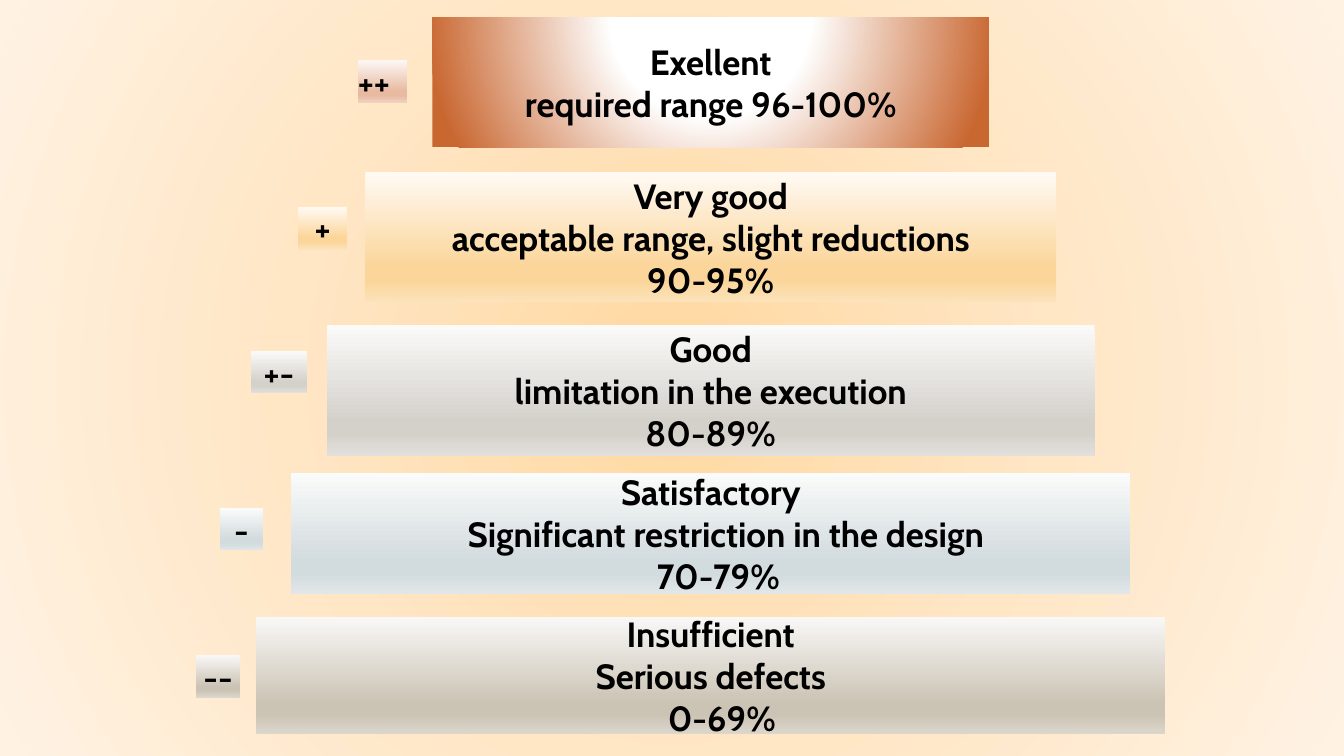
from lxml import etree
from pptx import Presentation
from pptx.dml.color import RGBColor
from pptx.enum.shapes import MSO_SHAPE
from pptx.enum.text import MSO_ANCHOR, MSO_AUTO_SIZE, PP_ALIGN
from pptx.oxml.ns import qn
from pptx.util import Cm, Pt

RECTANGLE = MSO_SHAPE.RECTANGLE
MIDDLE = MSO_ANCHOR.MIDDLE
GROW = MSO_AUTO_SIZE.SHAPE_TO_FIT_TEXT
NO_FIT = MSO_AUTO_SIZE.NONE
LEFT, CENTER = PP_ALIGN.LEFT, PP_ALIGN.CENTER

COLORS = {
    "text": "000000",
    "page": ("FFD8A0", "FFE6C5", "FFF2E3"),
    "glow": ("FFFFFF", "FFFFFF", "C96731"),
    "rust": ("FCF7F5", "E8BAA1", "E8BAA1", "F0D1C0"),
    "amber": ("FFFAF4", "FBD599", "FBD599", "FCE3BB"),
    "stone": ("FAFAF9", "D4D1CB", "D4D1CB", "E2E0DC"),
    "mist": ("FAFBFB", "D2DBDE", "D2DBDE", "E1E7E9"),
    "sand": ("F9F8F7", "CBC3B4", "CBC3B4", "DCD7CD"),
}
BAND_STOPS = (0, 74, 83, 100)
BAR_CENTER = 17.91

BARS = [
    ("sand", 15.54, 22.91, 2.97,
     [("Insufficient", 0), ("Serious defects", 0), ("0-69%", 0.56)]),
    ("mist", 11.91, 21.16, 3.05,
     [("Satisfactory", 0), ("Significant restriction in the design", 0.76), ("70-79%", 0.38)]),
    ("stone", 8.2, 19.35, 3.28,
     [("Good", 0), ("limitation in the execution", 0), ("80-89%", 0)]),
    ("amber", 4.34, 17.4, 3.28,
     [("Very good", 0), ("acceptable range, slight reductions", 0), ("90-95%", 0)]),
    ("glow", 0.43, 14.02, 3.28,
     [("Exellent", 0), ("required range 96-100%", 0)]),
]
BADGES = [
    ("rust", 9.02, 1.52, 1.24, "++", LEFT),
    ("amber", 7.52, 5.21, 1.22, "+", CENTER),
    ("stone", 6.32, 8.84, 1.42, "+-", CENTER),
    ("mist", 5.54, 12.8, 1.09, "-", CENTER),
    ("sand", 4.95, 16.51, 1.09, "--", CENTER),
]


def write_text(para, text, font="Cabin", size=25, align=CENTER, indent=0):
    para.alignment = align
    if indent:
        para._p.get_or_add_pPr().set("marL", str(Cm(indent)))
    span = para.add_run()
    span.text = text
    span.font.name = font
    span.font.size = Pt(size)
    span.font.bold = True
    span.font.color.rgb = RGBColor.from_string(COLORS["text"])


def paint_gradient(fill, owner, name, stops=BAND_STOPS, focus=None):
    fill.gradient()
    gradient = next(owner.iter(qn("a:gradFill")))
    for child in list(gradient):
        gradient.remove(child)
    stop_list = etree.SubElement(gradient, qn("a:gsLst"))
    for position, color in zip(stops, COLORS[name]):
        stop = etree.SubElement(stop_list, qn("a:gs"), pos=str(position * 1000))
        etree.SubElement(stop, qn("a:srgbClr"), val=color)
    if focus:
        circle = etree.SubElement(gradient, qn("a:path"), path="circle")
        sides = {side: str(share * 1000) for side, share in zip("ltrb", focus)}
        etree.SubElement(circle, qn("a:fillToRect"), sides)
    else:
        etree.SubElement(gradient, qn("a:lin"), ang="5400000", scaled="0")


class RatingSlide:
    def __init__(self, deck):
        self.page = deck.slides.add_slide(deck.slide_layouts[6])
        paint_gradient(self.page.background.fill, self.page._element, "page",
                       stops=(0, 50, 100), focus=(50, 50, 50, 50))

    def box(self, name, left, top, width, height, lines, align=CENTER, fit=NO_FIT):
        box = self.page.shapes.add_shape(RECTANGLE, Cm(left), Cm(top), Cm(width), Cm(height))
        box.shadow.inherit = False
        box.line.fill.background()
        if name == "glow":
            paint_gradient(box.fill, box._element, name,
                           stops=(0, 35, 100), focus=(50, -80, 50, 180))
        else:
            paint_gradient(box.fill, box._element, name)
        frame = box.text_frame
        frame.margin_left = frame.margin_right = frame.margin_top = frame.margin_bottom = 0
        frame.vertical_anchor = MIDDLE
        frame.word_wrap = True
        frame.auto_size = fit
        for index, (text, indent) in enumerate(lines):
            para = frame.add_paragraph() if index else frame.paragraphs[0]
            write_text(para, text, align=align, indent=indent)

    def bar(self, name, top, width, height, lines):
        self.box(name, BAR_CENTER - width / 2, top, width, height, lines)

    def badge(self, name, left, top, width, mark, align):
        self.box(name, left, top, width, 1.07, [(mark, 0)], align=align, fit=GROW)


def main():
    deck = Presentation()
    deck.slide_width, deck.slide_height = Cm(33.87), Cm(19.05)
    rating = RatingSlide(deck)
    for bar in BARS:
        rating.bar(*bar)
    for badge in BADGES:
        rating.badge(*badge)
    deck.save("out.pptx")


if __name__ == "__main__":
    main()
